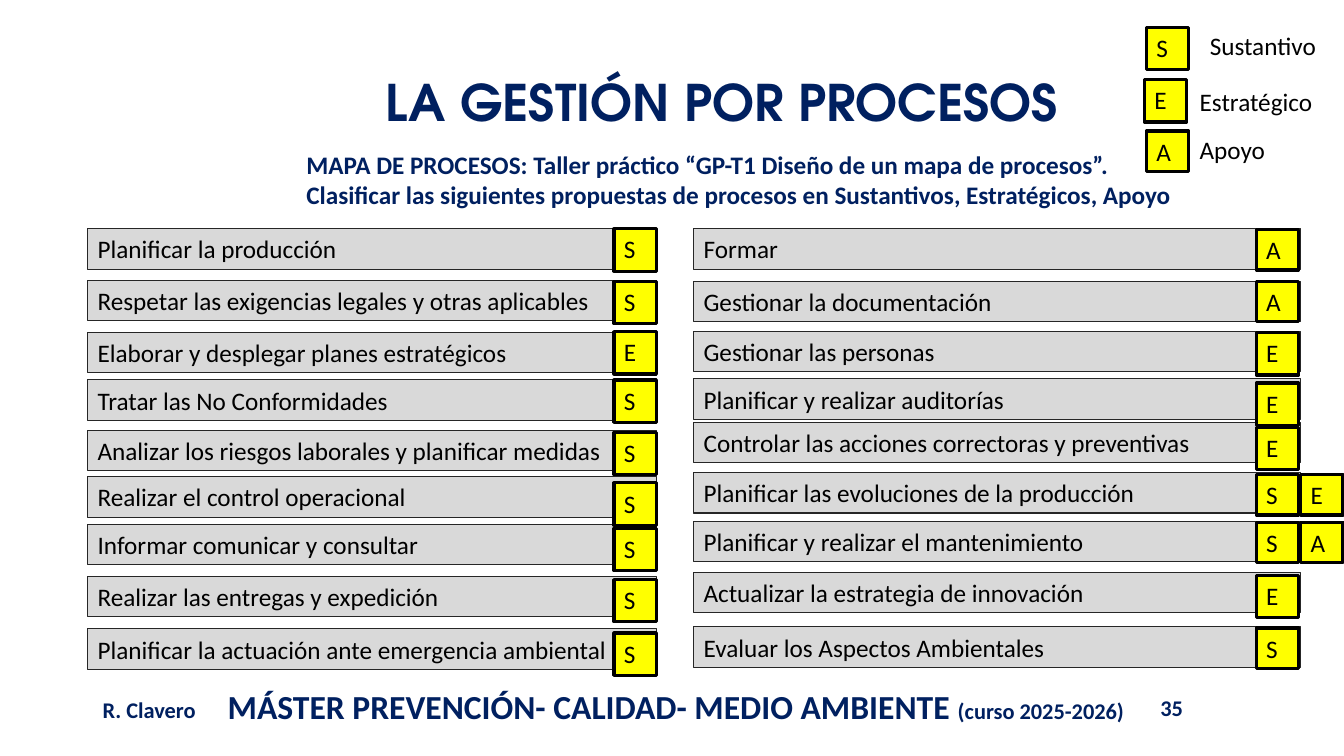
from pptx import Presentation
from pptx.dml.color import RGBColor as RGB
from pptx.enum.shapes import MSO_SHAPE as Shape
from pptx.enum.text import MSO_ANCHOR as Anchor, PP_ALIGN as Align
from pptx.util import Inches, Pt

COLORS = {"navy": "002060", "gray": "D9D9D9", "edge": "262626",
          "black": "000000", "yellow": "FFFF00"}
BODY = "Calibri"
HEAD = "TeX Gyre Adventor"

LEFT = [
    (0, 0, "Planificar la producción", "S"),
    (0.51, 0.01, "Respetar las exigencias legales y otras aplicables", "S"),
    (1.03, -0.01, "Elaborar y desplegar planes estratégicos", "E"),
    (1.5, 0, "Tratar las No Conformidades", "S"),
    (2, 0.02, "Analizar los riesgos laborales y planificar medidas", "S"),
    (2.46, 0.06, "Realizar el control operacional", "S"),
    (2.93, 0.04, "Informar comunicar y consultar", "S"),
    (3.45, 0.03, "Realizar las entregas y expedición", "S"),
    (3.97, 0.04, "Planificar la actuación ante emergencia ambiental", "S"),
]
RIGHT = [
    (0, 0.01, "Formar", "A"),
    (0.52, 0, "Gestionar la documentación", "A"),
    (1.02, 0.01, "Gestionar las personas", "E"),
    (1.49, 0.04, "Planificar y realizar auditorías", "E"),
    (1.92, 0.05, "Controlar las acciones correctoras y preventivas", "E"),
    (2.42, 0.02, "Planificar las evoluciones de la producción", "SE"),
    (2.9, 0.01, "Planificar y realizar el mantenimiento", "SA"),
    (3.41, 0.03, "Actualizar la estrategia de innovación", "E"),
    (3.95, 0.01, "Evaluar los Aspectos Ambientales", "S"),
]
LEGEND = [
    (0.02, 0, 0.42, "S", 0.55, 0, 1.35, "Sustantivo"),
    (0, 0.54, 0.42, "E", 0.45, 0.56, 1.45, "Estratégico"),
    (0.02, 1.05, 0.4, "A", 0.45, 1.03, 1.1, "Apoyo"),
]


def color(name):
    return RGB.from_string(COLORS[name])


def style(font, size, tone, bold=False, face=BODY):
    font.name, font.size, font.bold = face, Pt(size), bold
    font.color.rgb = color(tone)


def label(slide, box, lines, size=18, tone="navy", bold=True, face=BODY):
    frame = slide.shapes.add_textbox(*map(Inches, box)).text_frame
    frame.word_wrap = True
    frame.text = "\n".join(lines)
    for para in frame.paragraphs:
        style(para.font, size, tone, bold, face)
    return frame


def block(slide, box, text, fill, edge, width):
    shape = slide.shapes.add_shape(Shape.RECTANGLE, *map(Inches, box))
    shape.shadow.inherit = False
    shape.fill.solid()
    shape.fill.fore_color.rgb = color(fill)
    shape.line.color.rgb = color(edge)
    shape.line.width = Pt(width)
    frame = shape.text_frame
    frame.word_wrap = True
    frame.vertical_anchor = Anchor.TOP
    frame.text = text
    para = frame.paragraphs[0]
    para.alignment = Align.LEFT
    style(para.font, 18, "black")


def badge(slide, x, y, high, letter):
    block(slide, (x, y, 0.42, high), letter, "yellow", "black", 2.25)


def column(slide, x, y, wide, rows, shift, tall):
    for top, _, text, _ in rows:
        block(slide, (x, y + top, wide, 0.4), text, "gray", "edge", 0.75)
    for top, drop, _, tags in rows:
        high = 0.42 if tags in tall else 0.4
        for i, letter in enumerate(tags):
            badge(slide, x + shift + i * 0.44, y + top + drop, high, letter)


def legend(slide, x, y):
    for left, top, high, letter, dx, dy, wide, text in LEGEND:
        label(slide, (x + dx, y + dy, wide, 0.4), [text], tone="black", bold=False)
        badge(slide, x + left, y + top + (0.02 if top == 0 else 0), high, letter)


def header(slide, x, y):
    title = label(slide, (x, y, 10, 1.21), ["LA GESTIÓN POR PROCESOS"], 36, face=HEAD)
    title.vertical_anchor = Anchor.MIDDLE
    title.paragraphs[0].alignment = Align.CENTER
    title.paragraphs[0].line_spacing = 0.9
    label(slide, (x + 0.78, y + 0.99, 9.06, 0.71), [
        "MAPA DE PROCESOS: Taller práctico “GP-T1 Diseño de un mapa de procesos”.",
        "Clasificar las siguientes propuestas de procesos en Sustantivos, Estratégicos, Apoyo"])


def footer(slide, x, y):
    label(slide, (x, y + 0.1, 1.37, 0.4), ["R. Clavero"], 16)
    course = label(slide, (x + 1.24, y, 9.1, 0.4),
                   ["MÁSTER PREVENCIÓN- CALIDAD- MEDIO AMBIENTE "], 24)
    run = course.paragraphs[0].add_run()
    run.text = "(curso 2025-2026)"
    run.font.size = Pt(16)
    label(slide, (x + 10.49, y + 0.08, 1, 0.38), ["35"], 16)


def main():
    deck = Presentation()
    deck.slide_width, deck.slide_height = Inches(13.33), Inches(7.5)
    slide = deck.slides.add_slide(deck.slide_layouts[6])
    footer(slide, 0.92, 6.76)
    header(slide, 2.16, 0.44)
    column(slide, 0.87, 2.27, 5.64, LEFT, 5.22, ["S", "E"])
    column(slide, 6.88, 2.27, 6.02, RIGHT, 5.58, ["E"])
    legend(slide, 11.35, 0.25)
    deck.save("out.pptx")


if __name__ == "__main__":
    main()
